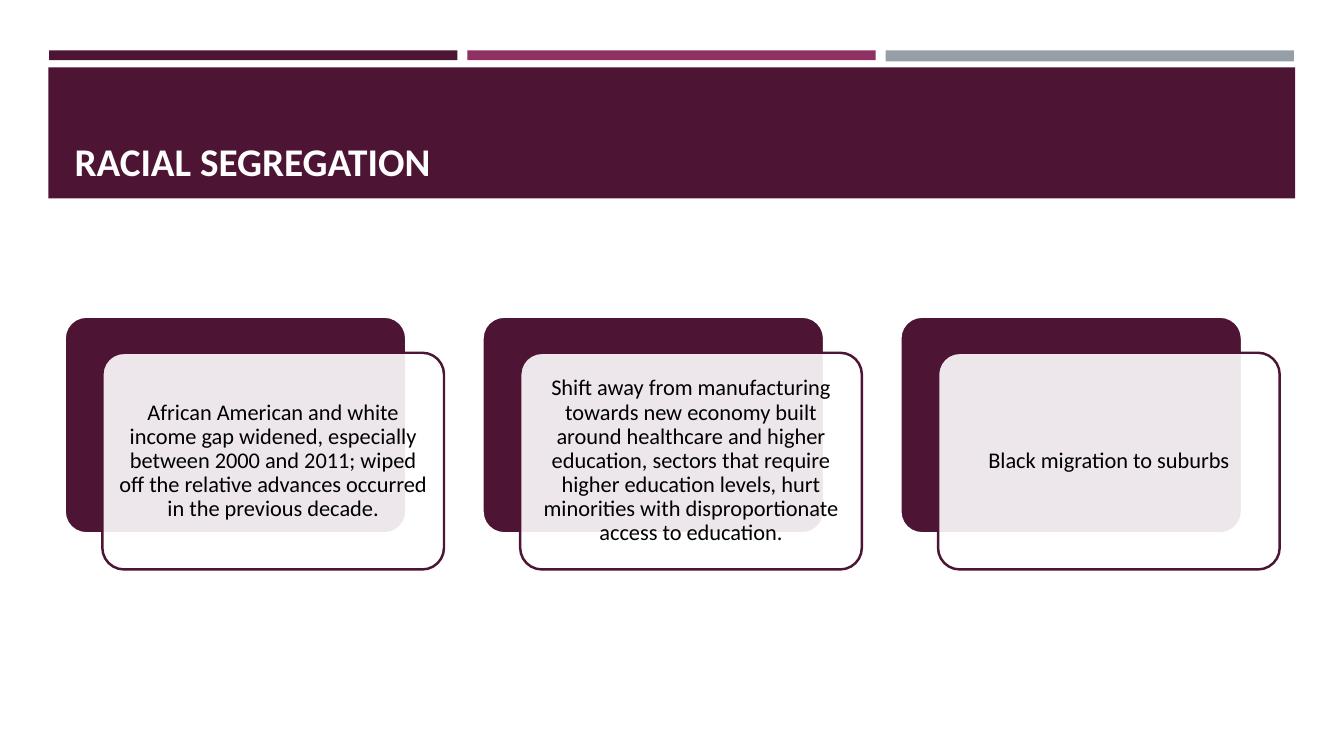
import pptx
import pptx.util
import pptx.dml.color
import pptx.enum.shapes
import pptx.enum.text
import pptx.oxml.ns
import lxml.etree

Cm = pptx.util.Cm
Pt = pptx.util.Pt
Kind = pptx.enum.shapes.MSO_SHAPE
Anchor = pptx.enum.text.MSO_ANCHOR
Align = pptx.enum.text.PP_ALIGN

title = "RACIAL SEGREGATION"
notes = [
    "African American and white income gap widened, especially between 2000 and 2011; "
    "wiped off the relative advances occurred in the previous decade.",
    "Shift away from manufacturing towards new economy built around healthcare and higher "
    "education, sectors that require higher education levels, hurt minorities with "
    "disproportionate access to education.",
    "Black migration to suburbs",
]
plum, white, black = "4D1434", "FFFFFF", "000000"
bars = [(plum, 0.25), ("903163", 0.25), ("969FA7", 0.28)]

bar = {"left": 1.24, "top": 1.27, "width": 10.29, "step": 10.54}
band = (1.22, 1.7, 31.42, 3.3)
head = (1.63, 1.96, 30.63, 2.82)
card = {"left": 1.63, "top": 7.98, "width": 8.61, "height": 5.46, "step": 10.53}
shift = (0.95, 0.91)
inset = 0.15

head_form = {
    "frame": {"word_wrap": True, "vertical_anchor": Anchor.BOTTOM},
    "para": {"alignment": Align.LEFT},
    "font": {"name": "Calibri", "size": Pt(28), "bold": True},
}
note_form = {
    "frame": {
        "word_wrap": True, "vertical_anchor": Anchor.MIDDLE,
        "margin_left": Cm(0.17), "margin_right": Cm(0.17),
        "margin_top": Cm(0.17), "margin_bottom": Cm(0.17),
    },
    "para": {"alignment": Align.CENTER, "line_spacing": 0.9, "space_after": Pt(5.6)},
    "font": {"name": "Calibri", "size": Pt(16), "bold": False},
}


def paint(part, tone):
    part.rgb = pptx.dml.color.RGBColor.from_string(tone)


def apply(part, form):
    for key, value in form.items():
        setattr(part, key, value)


def draw(kind, box, fill, line=None, alpha=None):
    shape = slide.shapes.add_shape(kind, *map(Cm, box))
    shape.shadow.inherit = False
    shape.fill.solid()
    paint(shape.fill.fore_color, fill)
    if alpha:
        tone = shape.fill._xPr.find(".//" + pptx.oxml.ns.qn("a:srgbClr"))
        lxml.etree.SubElement(tone, pptx.oxml.ns.qn("a:alpha"), val=str(alpha * 1000))
    if line:
        paint_line = shape.line
        paint_line.fill.solid()
        paint(paint_line.color, line)
        paint_line.width = Pt(1.75)
    else:
        shape.line.fill.background()
    if kind == Kind.ROUNDED_RECTANGLE:
        shape.adjustments[0] = 0.1


def write(text, box, tone, form):
    frame = slide.shapes.add_textbox(*map(Cm, box)).text_frame
    para = frame.paragraphs[0]
    run = para.add_run()
    run.text = text
    for name, part in (("frame", frame), ("para", para), ("font", run.font)):
        apply(part, form[name])
    paint(run.font.color, tone)


deck = pptx.Presentation()
deck.slide_width, deck.slide_height = Cm(33.87), Cm(19.05)
slide = deck.slides.add_slide(deck.slide_layouts[6])

for i, (tone, height) in enumerate(bars):
    left = bar["left"] + i * bar["step"]
    draw(Kind.RECTANGLE, (left, bar["top"], bar["width"], height), tone)

draw(Kind.RECTANGLE, band, plum)
write(title, head, "FFFEFF", head_form)

for i, note in enumerate(notes):
    left, top = card["left"] + i * card["step"], card["top"]
    wide, high = card["width"], card["height"]
    draw(Kind.ROUNDED_RECTANGLE, (left, top, wide, high), plum, white)
    left, top = left + shift[0], top + shift[1]
    draw(Kind.ROUNDED_RECTANGLE, (left, top, wide, high), white, plum, 90)
    area = (left + inset, top + inset, wide - 2 * inset, high - 2 * inset)
    write(note, area, black, note_form)

deck.save("out.pptx")
